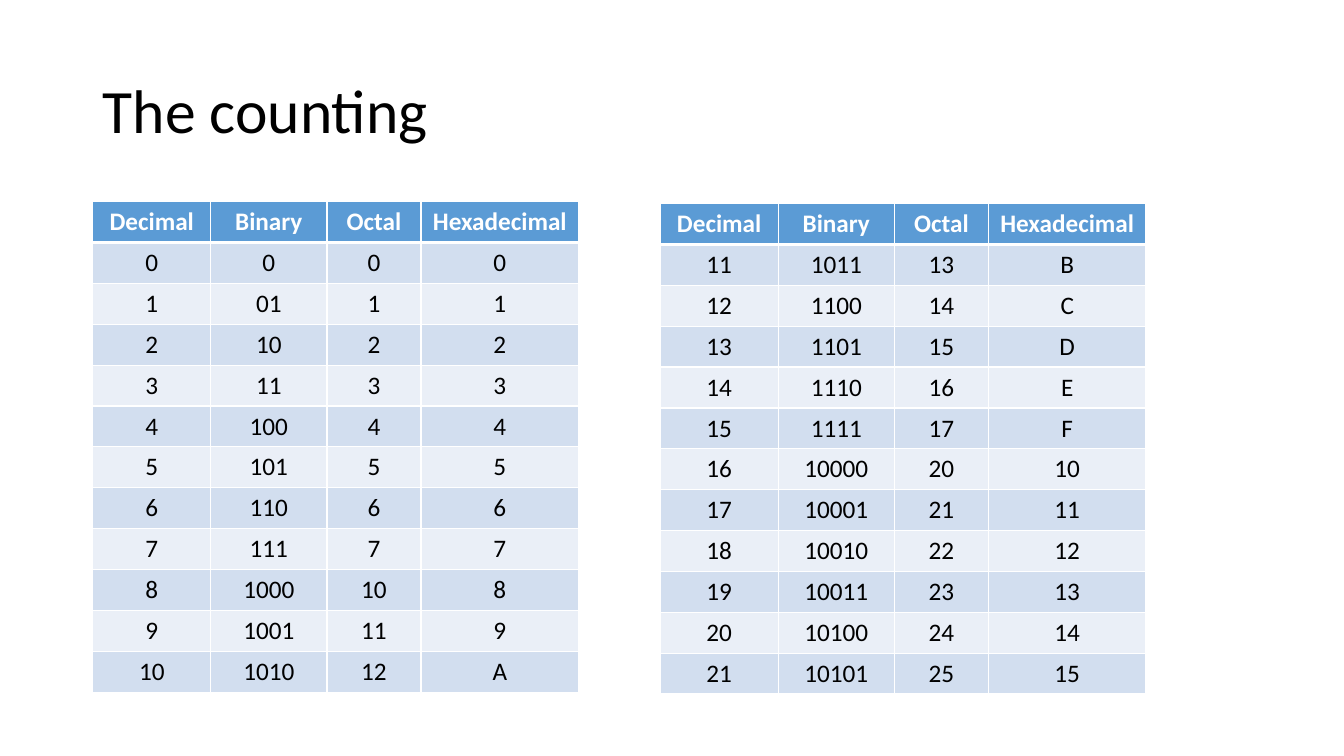
from dataclasses import dataclass

from lxml.etree import SubElement
from pptx import Presentation
from pptx.dml.color import RGBColor
from pptx.enum.text import MSO_ANCHOR, PP_ALIGN
from pptx.oxml.ns import qn
from pptx.slide import Slide
from pptx.table import _Cell as Cell
from pptx.util import Cm, Pt

BLACK = RGBColor(0x00, 0x00, 0x00)
WHITE = RGBColor(0xFF, 0xFF, 0xFF)
BLUE = RGBColor(0x5B, 0x9B, 0xD5)
MID = RGBColor(0xD2, 0xDE, 0xEF)
PALE = RGBColor(0xEA, 0xEF, 0xF7)

FONT = "Calibri"
HEADS = ("Decimal", "Binary", "Octal", "Hexadecimal ")
WIDTHS = (2.97, 2.93, 2.37, 3.97)
ROW = 1.03
COUNT = 11


@dataclass
class Block:
    left: float
    top: float
    first: int


BLOCKS = (Block(2.34, 5.08, 0), Block(16.64, 5.13, 11))


def bases(num: int) -> tuple[str, ...]:
    """Write a number in each base; one alone has a leading zero in binary."""
    binary = "01" if num == 1 else f"{num:b}"
    return str(num), binary, f"{num:o}", f"{num:X}"


def add_edge(cell: Cell, side: str, width: float) -> None:
    props = cell._tc.get_or_add_tcPr()
    line = SubElement(props, qn(f"a:ln{side}"), w=str(Pt(width)))
    fill = SubElement(line, qn("a:solidFill"))
    SubElement(fill, qn("a:srgbClr"), val=str(WHITE))


def fill_cell(cell: Cell, text: str, row: int) -> None:
    head = row == 0
    # Edges come before the fill; the header's lower edge is thick
    for side in "LRTB" if head else "LRB":
        add_edge(cell, side, 3 if head and side == "B" else 1)
    cell.fill.solid()
    cell.fill.fore_color.rgb = BLUE if head else (MID if row % 2 else PALE)
    cell.text = text
    para = cell.text_frame.paragraphs[0]
    para.alignment = PP_ALIGN.CENTER
    font = para.font
    font.name, font.size, font.bold = FONT, Pt(18), head
    font.color.rgb = WHITE if head else BLACK


def add_block(slide: Slide, block: Block) -> None:
    rows = [HEADS] + [bases(block.first + step) for step in range(COUNT)]
    table = slide.shapes.add_table(
        len(rows), len(HEADS), Cm(block.left), Cm(block.top),
        Cm(sum(WIDTHS)), Cm(ROW * len(rows))).table
    for col, width in zip(table.columns, WIDTHS):
        col.width = Cm(width)
    for row, texts in enumerate(rows):
        table.rows[row].height = Cm(ROW)
        for col, text in enumerate(texts):
            fill_cell(table.cell(row, col), text, row)


def add_title(slide: Slide, text: str) -> None:
    title = slide.shapes.title
    title.left, title.top = Cm(2.34), Cm(1.02)
    title.width, title.height = Cm(29.21), Cm(3.68)
    frame = title.text_frame
    frame.text = text
    frame.vertical_anchor = MSO_ANCHOR.MIDDLE
    para = frame.paragraphs[0]
    para.alignment = PP_ALIGN.LEFT
    para.line_spacing = 0.9
    para.font.name, para.font.size = FONT, Pt(44)
    para.font.color.rgb = BLACK


def main() -> None:
    deck = Presentation()
    deck.slide_width, deck.slide_height = Cm(33.87), Cm(19.05)
    slide = deck.slides.add_slide(deck.slide_layouts[5])

    # Title
    add_title(slide, "The counting")

    # Counting tables
    for block in BLOCKS:
        add_block(slide, block)

    deck.save("out.pptx")


if __name__ == "__main__":
    main()
